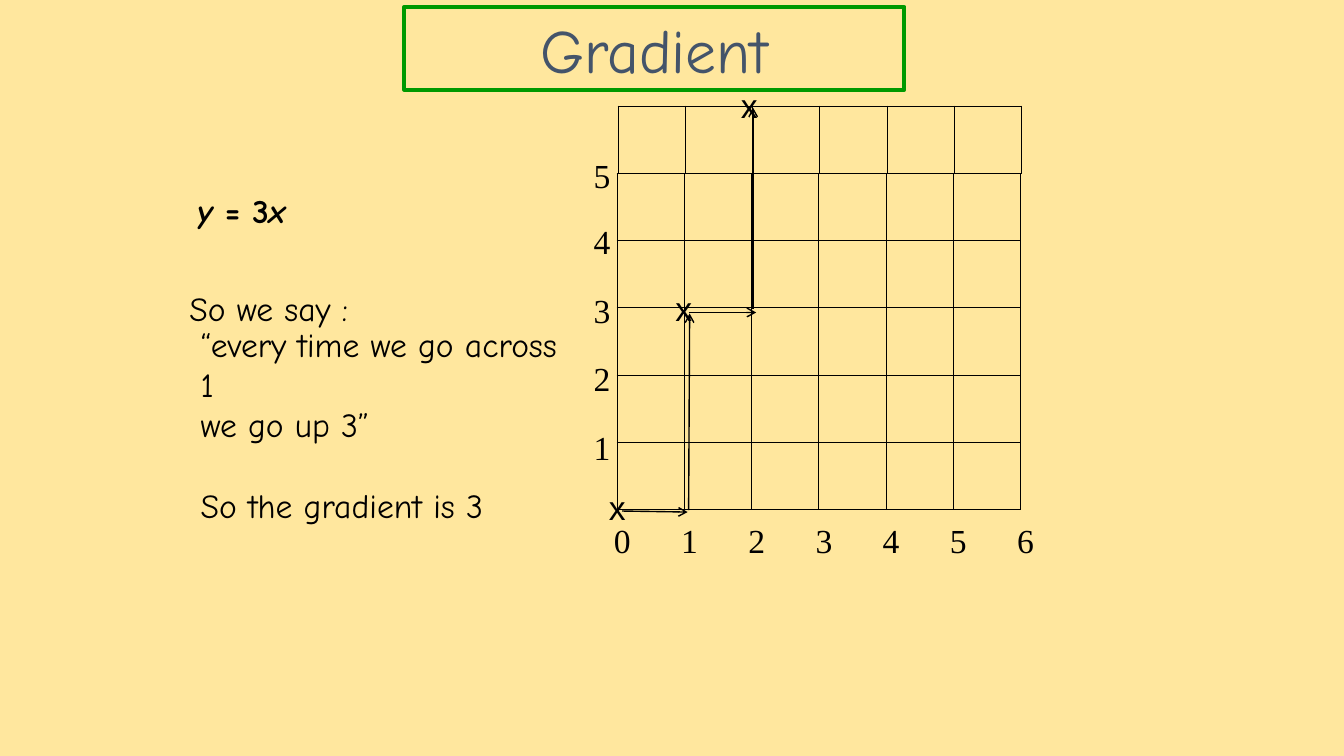
"""Build a slide that reads the gradient of y = 3x from a grid."""
from lxml.etree import SubElement
from pptx import Presentation
from pptx.dml.color import RGBColor
from pptx.enum.shapes import MSO_CONNECTOR
from pptx.enum.text import MSO_ANCHOR, MSO_AUTO_SIZE, PP_ALIGN
from pptx.oxml import parse_xml
from pptx.oxml.ns import nsdecls, qn
from pptx.util import Inches, Pt

SAND = RGBColor(0xFF, 0xE7, 0x9E)
GREEN = RGBColor(0x00, 0x99, 0x00)
SLATE = RGBColor(0x44, 0x54, 0x6A)
BLACK = RGBColor(0x00, 0x00, 0x00)
COMIC, TIMES, ARIAL = "Comic Neue", "Times New Roman", "Arial"
STEP = 4 / 6


def style(font, color, **form):
    for key, val in form.items():
        setattr(font, key, val)
    font.color.rgb = color


def write(box, lines, face, gaps=(), wrap=False):
    shape = deck.shapes.add_textbox(*map(Inches, box))
    frame = shape.text_frame
    frame.word_wrap = wrap
    frame.text = "\n".join(lines)
    for para in frame.paragraphs:
        style(para.font, BLACK, name=face, size=Pt(24))
    for para, gap in zip(frame.paragraphs[1:], gaps):
        para.space_before = Pt(gap)
    return frame


show = Presentation()
show.slide_width, show.slide_height = Inches(13.33), Inches(7.5)
deck = show.slides.add_slide(show.slide_layouts[5])
deck.background.fill.solid()
deck.background.fill.fore_color.rgb = SAND

title = deck.shapes.title
place = {"left": 4.01, "top": 0.07, "width": 4.96, "height": 0.82}
for key, val in place.items():
    setattr(title, key, Inches(val))
title.line.color.rgb = GREEN
title.line.width = Pt(3)
frame = title.text_frame
frame.text = "Gradient"
frame.auto_size = MSO_AUTO_SIZE.NONE
frame.vertical_anchor = MSO_ANCHOR.MIDDLE
head = frame.paragraphs[0]
head.alignment = PP_ALIGN.CENTER
style(head.font, SLATE, name=COMIC, size=Pt(44))

rule = write((1.86, 1.83, 1.43, 0.51), [""], COMIC).paragraphs[0]
for part, slant in (("y", True), (" = 3", False), ("x", True)):
    run = rule.add_run()
    run.text = part
    style(run.font, BLACK, name=COMIC, size=Pt(24), bold=True, italic=slant)

for left, top, rows in ((6.12, 1.72, 5), (6.13, 1.05, 1)):
    size = map(Inches, (left, top, 6 * STEP, rows * STEP))
    grid = deck.shapes.add_table(rows, 6, *size).table
    grid.first_row = grid.horz_banding = False
    for cell in grid.iter_cells():
        props = cell._tc.get_or_add_tcPr()
        for side in "LRTB":
            props.append(parse_xml(
                f'<a:ln{side} {nsdecls("a")} w="6350"><a:solidFill>'
                f'<a:srgbClr val="{BLACK}"/></a:solidFill></a:ln{side}>'))
        cell.fill.background()

marks = "\t".join(str(num) for num in range(7))
axis = write((5.99, 5.11, 4.41, 0.51), [""], TIMES, wrap=True).paragraphs[0]
stops = SubElement(axis._p.get_or_add_pPr(), qn("a:tabLst"))
axis._p.pPr.insert(0, stops)
for num in range(1, 7):
    SubElement(stops, qn("a:tab"), pos=str(Inches(num * STEP)), algn="l")
axis.text = marks
style(axis.font, BLACK, name=TIMES, size=Pt(24))
write((5.79, 1.49, 0.37, 3.1), "54321", TIMES, (18, 20.4, 20.4, 20.4))

write((1.78, 2.81, 1.94, 0.51), ["So we say :"], COMIC)
say = ["“every time we go across 1", "we go up 3”", "So the gradient is 3"]
write((1.89, 3.16, 3.85, 2.12), say, COMIC, (0, 28.8), wrap=True)

for left, top in ((5.94, 4.78), (6.6, 2.81), (7.25, 0.79)):
    write((left, top, 0.37, 0.5), ["x"], ARIAL)

moves = ((6.17, 5.07, 6.82, 5.08), (6.83, 5.06, 6.84, 3.11),
         (6.83, 3.1, 7.5, 3.1), (7.47, 3.07, 7.47, 1.07))
for ends in moves:
    arrow = deck.shapes.add_connector(MSO_CONNECTOR.STRAIGHT, *map(Inches, ends))
    arrow.line.color.rgb = BLACK
    arrow.line.width = Pt(1)
    SubElement(arrow.line._get_or_add_ln(), qn("a:tailEnd"), type="arrow")
    SubElement(arrow._element.spPr, qn("a:effectLst"))

show.save("out.pptx")
